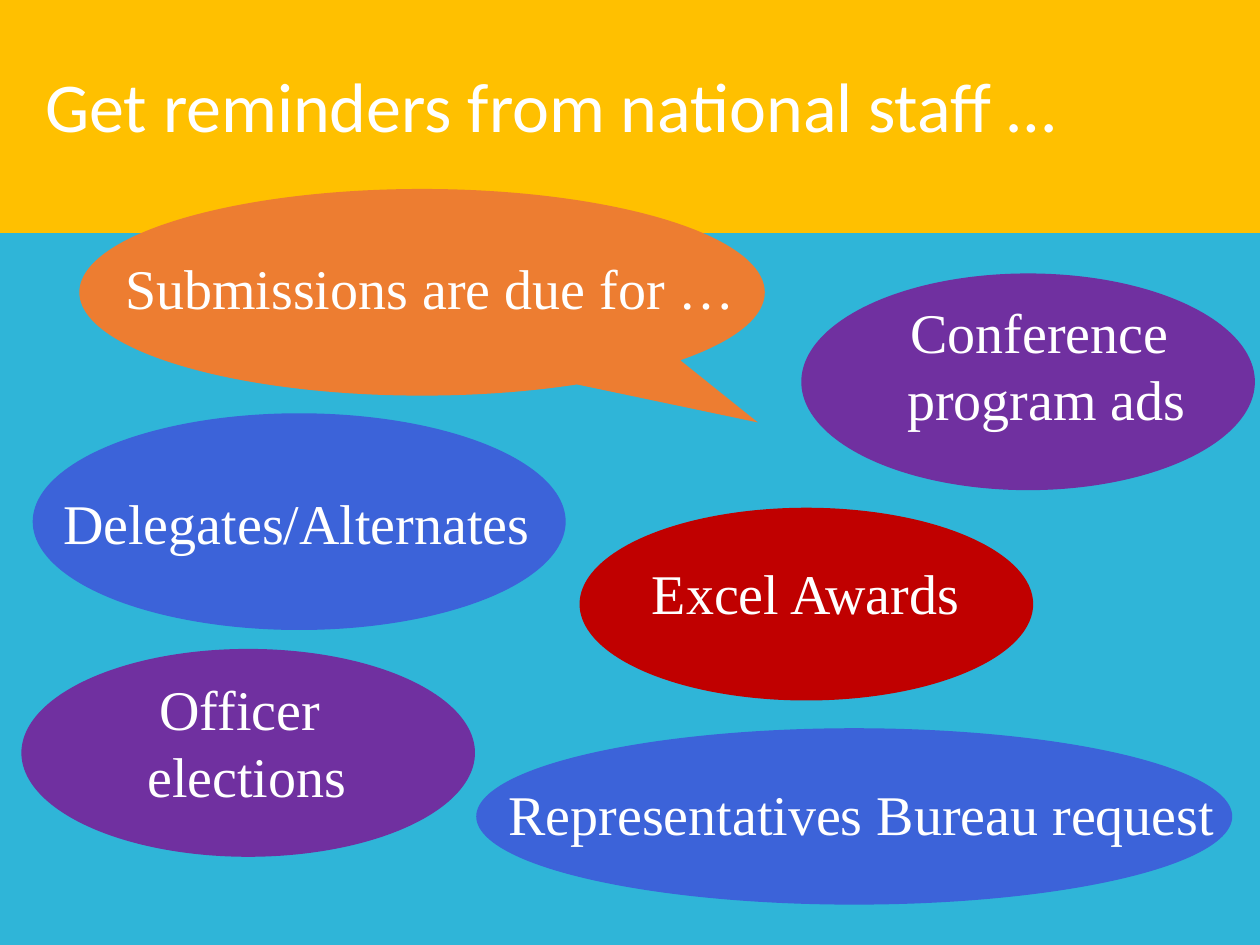
from pptx import Presentation
from pptx.dml.color import RGBColor
from pptx.enum.shapes import MSO_SHAPE as Shape
from pptx.enum.text import MSO_ANCHOR as Anchor, MSO_AUTO_SIZE as AutoSize, PP_ALIGN as Align
from pptx.util import Inches, Pt

WHITE = RGBColor(0xFF, 0xFF, 0xFF)
GOLD = RGBColor(0xFF, 0xC0, 0x00)
SKY = RGBColor(0x2F, 0xB5, 0xD8)
ORANGE = RGBColor(0xED, 0x7D, 0x31)
PURPLE = RGBColor(0x70, 0x30, 0xA0)
RED = RGBColor(0xC0, 0x00, 0x00)
BLUE = RGBColor(0x3C, 0x63, 0xD9)


def write_text(frame, text, font="Times New Roman", size=32, color=WHITE, align=Align.CENTER):
    frame.word_wrap = True
    frame.auto_size = AutoSize.NONE
    frame.vertical_anchor = Anchor.TOP
    frame.text = text
    for paragraph in frame.paragraphs:
        paragraph.alignment = align
        paragraph.font.name = font
        paragraph.font.size = Pt(size)
        paragraph.font.color.rgb = color


def add_filled(kind, box, color):
    filled = slide.shapes.add_shape(kind, *map(Inches, box))
    filled.shadow.inherit = False
    filled.fill.solid()
    filled.fill.fore_color.rgb = color
    filled.line.fill.background()
    return filled


prs = Presentation()
prs.slide_width, prs.slide_height = Inches(10), Inches(7.5)
slide = prs.slides.add_slide(prs.slide_layouts[5])

header = add_filled(Shape.RECTANGLE, (0, 0, 10, 1.85), GOLD)
add_filled(Shape.RECTANGLE, (0, 1.85, 10, 5.65), SKY)

title = slide.shapes.title
title.left, title.top, title.width, title.height = map(Inches, (0.26, 0.45, 8.67, 0.77))
write_text(title.text_frame, "Get reminders from national staff …",
           font="Calibri", size=40, align=Align.LEFT)
# The title placeholder starts at the back, so lift it above the header band
header._element.addnext(title._element)

# Each bubble: shape, its box, its colour, its text, the text's box
bubbles = [
    (Shape.OVAL_CALLOUT, (0.63, 1.5, 5.44, 1.64), ORANGE,
     "Submissions are due for …", (0.63, 1.96, 5.57, 1.18)),
    (Shape.OVAL, (0.17, 5.15, 3.6, 1.65), PURPLE,
     "Officer \nelections", (0.22, 5.3, 3.48, 1.72)),
    (Shape.OVAL, (4.6, 4.03, 3.6, 1.53), RED,
     "Excel Awards", (4.8, 4.38, 3.19, 1.18)),
    (Shape.OVAL, (6.36, 2.17, 3.6, 1.72), PURPLE,
     "Conference \nprogram ads", (6.84, 2.31, 2.93, 1.72)),
    (Shape.OVAL, (0.26, 3.28, 4.23, 1.72), BLUE,
     "Delegates/Alternates", (0.22, 3.83, 4.27, 1.18)),
    (Shape.OVAL, (3.78, 5.78, 6, 1.4), BLUE,
     "Representatives Bureau request", (3.84, 6.14, 6, 1.18)),
]
for kind, bubble_box, color, text, text_box in bubbles:
    bubble = add_filled(kind, bubble_box, color)
    if kind == Shape.OVAL_CALLOUT:
        bubble.adjustments[0], bubble.adjustments[1] = 0.49, 0.63
    label = slide.shapes.add_textbox(*map(Inches, text_box))
    write_text(label.text_frame, text)

prs.save("out.pptx")
